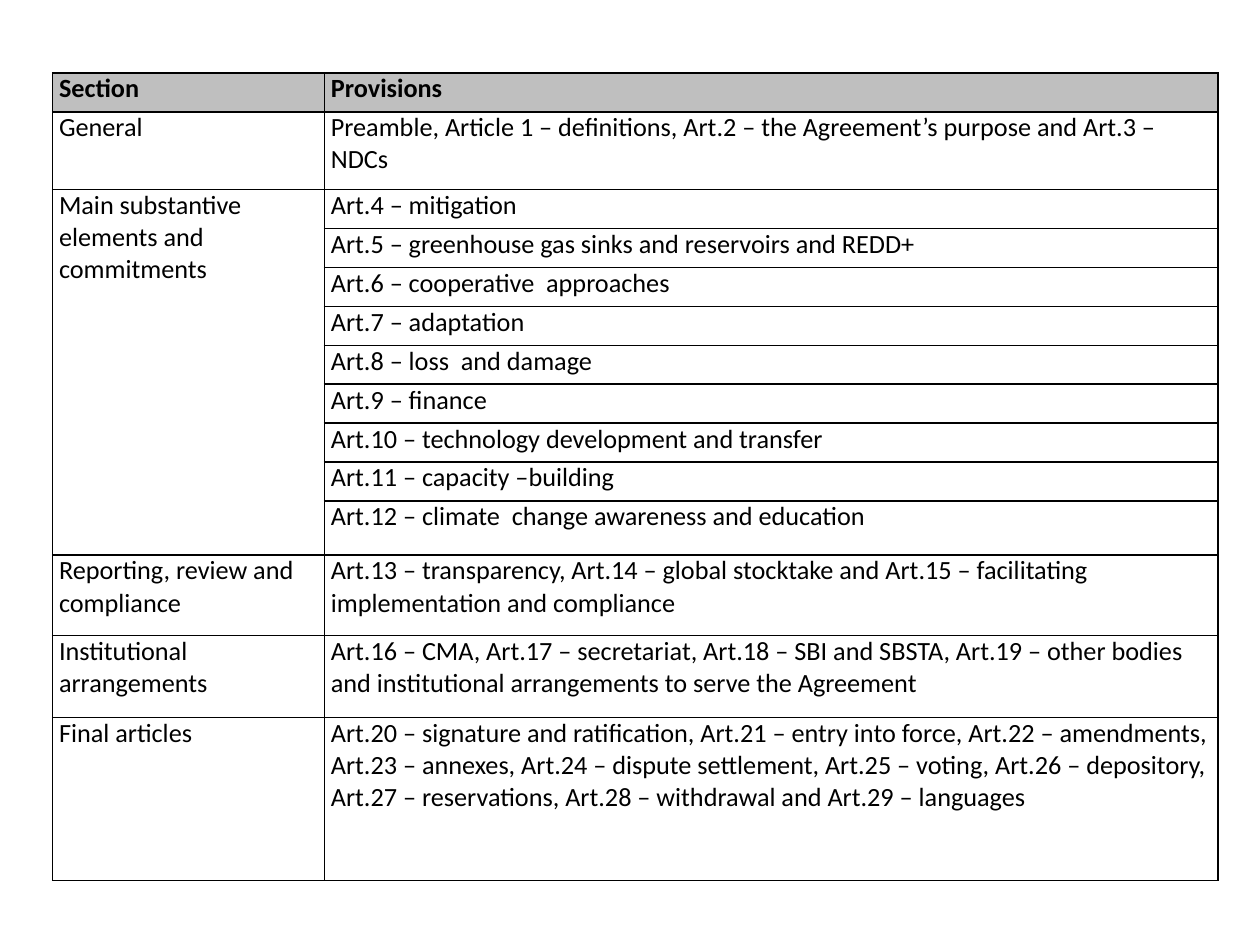
from lxml import etree
from pptx import Presentation
from pptx.dml.color import RGBColor
from pptx.oxml.ns import qn
from pptx.util import Cm, Pt

# Content: section, then (provision, row height in cm)
HEAD = ("Section", "Provisions")
LINE = 0.784  # height of a one-line row, cm
PARTS = [
    ("General", [
        ("Preamble, Article 1 – definitions, Art.2 – the Agreement’s purpose and Art.3 – NDCs", 1.57)]),
    ("Main substantive elements and commitments", [
        ("Art.4 – mitigation", LINE),
        ("Art.5 – greenhouse gas sinks and reservoirs and REDD+", LINE),
        ("Art.6 – cooperative  approaches", LINE),
        ("Art.7 – adaptation", LINE),
        ("Art.8 – loss  and damage", LINE),
        ("Art.9 – finance", LINE),
        ("Art.10 – technology development and transfer", LINE),
        ("Art.11 – capacity –building", LINE),
        ("Art.12 – climate  change awareness and education", 1.09)]),
    ("Reporting, review and compliance", [
        ("Art.13 – transparency, Art.14 – global stocktake and Art.15 – facilitating "
         "implementation and compliance", 1.63)]),
    ("Institutional arrangements", [
        ("Art.16 – CMA, Art.17 – secretariat, Art.18 – SBI and SBSTA, Art.19 – other bodies "
         "and institutional arrangements to serve the Agreement", 1.65)]),
    ("Final articles", [
        ("Art.20 – signature and ratification, Art.21 – entry into force, Art.22 – amendments, "
         "Art.23 – annexes, Art.24 – dispute settlement, Art.25 – voting, Art.26 – depository, "
         "Art.27 – reservations, Art.28 – withdrawal and Art.29 – languages", 3.28)]),
]
COLORS = {"ink": "000000", "head": "BFBFBF"}
COLS = (5.48, 18.01)
INSETS = {"margin_left": Cm(0.13), "margin_right": Cm(0.13),
          "margin_top": 0, "margin_bottom": 0}
FONT = {"name": "Calibri", "size": Pt(15)}


def put(cell, words, bold=False):
    """Write and style the words of a cell."""
    para = cell.text_frame.paragraphs[0]
    run = para.add_run()
    run.text = words
    for key, val in FONT.items():
        setattr(run.font, key, val)
    run.font.bold = bold
    run.font.color.rgb = RGBColor.from_string(COLORS["ink"])


def frame(cell):
    """Draw a thin line on all four sides; must come before the fill."""
    props = cell._tc.get_or_add_tcPr()
    for side in ("lnL", "lnR", "lnT", "lnB"):
        line = etree.SubElement(props, qn("a:" + side), w=str(Pt(1)))
        fill = etree.SubElement(line, qn("a:solidFill"))
        etree.SubElement(fill, qn("a:srgbClr"), val=COLORS["ink"])


# Slide
deck = Presentation()
deck.slide_width, deck.slide_height = Cm(25.4), Cm(19.05)
slide = deck.slides.add_slide(deck.slide_layouts[6])

# Table grid
highs = [LINE] + [high for _, items in PARTS for _, high in items]
grid = slide.shapes.add_table(len(highs), len(COLS), Cm(1.06), Cm(1.47),
                              Cm(sum(COLS)), Cm(sum(highs))).table
grid.horz_banding = False
for col, wide in zip(grid.columns, COLS):
    col.width = Cm(wide)
for row, high in zip(grid.rows, highs):
    row.height = Cm(high)

# Cell format
for num, row in enumerate(grid.rows):
    for cell in row.cells:
        for key, val in INSETS.items():
            setattr(cell, key, val)
        frame(cell)
        if num == 0:
            cell.fill.solid()
            cell.fill.fore_color.rgb = RGBColor.from_string(COLORS["head"])
        else:
            cell.fill.background()

# Header
for col, words in enumerate(HEAD):
    put(grid.cell(0, col), words, bold=True)

# Sections, each spanning its provisions
top = 1
for name, items in PARTS:
    last = top + len(items) - 1
    if last > top:
        grid.cell(top, 0).merge(grid.cell(last, 0))
    put(grid.cell(top, 0), name)
    for num, (words, _) in enumerate(items, top):
        put(grid.cell(num, 1), words)
    top = last + 1

deck.save("out.pptx")
